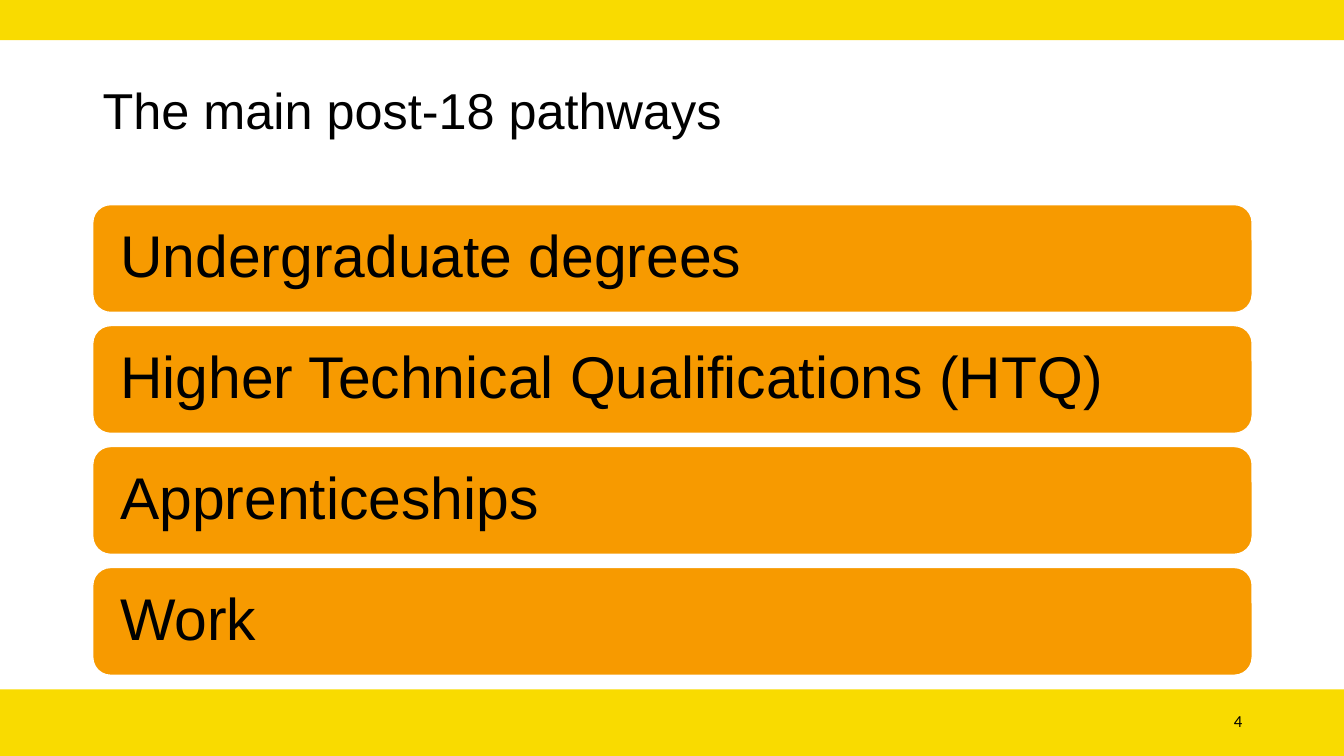
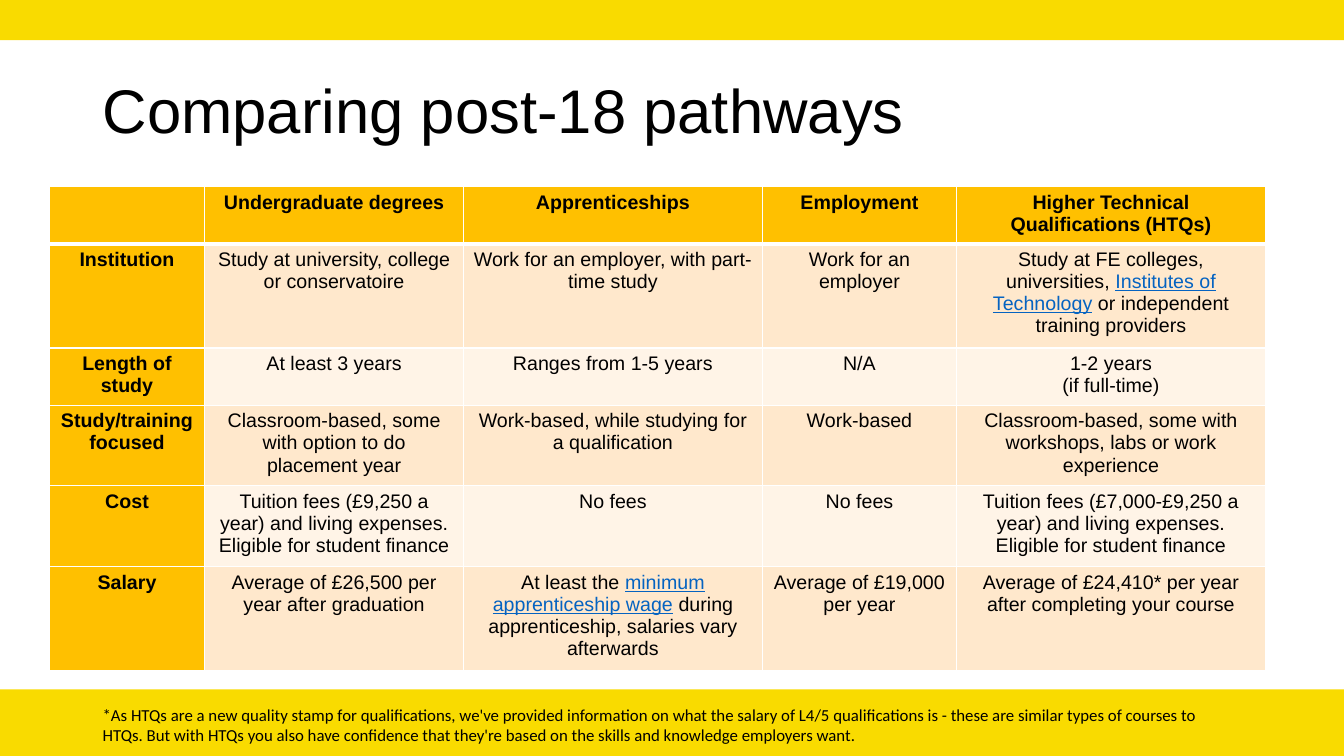
from lxml import etree
from pptx import Presentation
from pptx.dml.color import RGBColor
from pptx.enum import shapes, text as t
from pptx.oxml import ns
from pptx.util import Inches, Pt

BLACK = RGBColor(0x00, 0x00, 0x00)
WHITE = RGBColor(0xFF, 0xFF, 0xFF)
YELLOW = RGBColor(0xF9, 0xDB, 0x00)
ORANGE = RGBColor(0xF7, 0x9A, 0x00)
AMBER = RGBColor(0xFF, 0xC0, 0x00)
PEACH = RGBColor(0xFF, 0xE8, 0xCC)
CREAM = RGBColor(0xFF, 0xF4, 0xE7)
LINK_BLUE = RGBColor(0x05, 0x63, 0xC1)

SLIDE_WIDTH, SLIDE_HEIGHT = 13.33, 7.5
MARGIN = 0.92
LINK_MARK = "|"

PATHWAYS = [
    "Undergraduate degrees",
    "Higher Technical Qualifications (HTQ)",
    "Apprenticeships",
    "Work",
]

# Text between two link marks is shown as a link
COMPARISON = [
    ["", "Undergraduate degrees", "Apprenticeships", "Employment",
     "Higher Technical Qualifications (HTQs)"],
    ["Institution", "Study at university, college or conservatoire",
     "Work for an employer, with part-time study", "Work for an employer",
     "Study at FE colleges, universities, |Institutes of Technology| "
     "or independent training providers"],
    ["Length of study", "At least 3 years", "Ranges from 1-5 years", "N/A",
     "1-2 years\n(if full-time)"],
    ["Study/training focused",
     "Classroom-based, some with option to do placement year",
     "Work-based, while studying for a qualification", "Work-based",
     "Classroom-based, some with workshops, labs or work experience"],
    ["Cost",
     "Tuition fees (£9,250 a year) and living expenses. "
     "Eligible for student finance",
     "No fees", "No fees",
     "Tuition fees (£7,000-£9,250 a year) and living expenses. "
     "Eligible for student finance"],
    ["Salary", "Average of £26,500 per year after graduation",
     "At least the |minimum apprenticeship wage| during apprenticeship, "
     "salaries vary afterwards",
     "Average of £19,000 per year",
     "Average of £24,410* per year after completing your course"],
]
COLUMN_WIDTHS = [1.54, 2.57, 2.96, 1.93, 3.06]
ROW_HEIGHTS = [0.55, 0.97, 0.55, 0.77, 0.76, 0.97]

SALARY_NOTE = (
    "*As HTQs are a new quality stamp for qualifications, we've provided "
    "information on what the salary of L4/5 qualifications is - these are "
    "similar types of courses to HTQs. But with HTQs you also have confidence "
    "that they're based on the skills and knowledge employers want."
)


def write_text(frame, content, size=14, font="Arial", bold=False,
               align=t.PP_ALIGN.LEFT, spacing=None):
    """Fill a text frame: one paragraph a line, links between link marks."""
    frame.word_wrap = True
    for number, line in enumerate(content.split("\n")):
        paragraph = frame.add_paragraph() if number else frame.paragraphs[0]
        paragraph.alignment = align
        if spacing:
            paragraph.line_spacing = spacing
        for position, part in enumerate(line.split(LINK_MARK)):
            is_link = position % 2 == 1
            run = paragraph.add_run()
            run.text = part
            run.font.name = font
            run.font.size = Pt(size)
            run.font.bold = bold
            run.font.underline = is_link
            run.font.color.rgb = LINK_BLUE if is_link else BLACK


def add_text(slide, left, top, width, height, content,
             anchor=t.MSO_ANCHOR.TOP, **text_format):
    box = slide.shapes.add_textbox(
        Inches(left), Inches(top), Inches(width), Inches(height))
    box.text_frame.vertical_anchor = anchor
    write_text(box.text_frame, content, **text_format)


def add_block(slide, kind, left, top, width, height, fill):
    block = slide.shapes.add_shape(
        kind, Inches(left), Inches(top), Inches(width), Inches(height))
    block.shadow.inherit = False
    block.fill.solid()
    block.fill.fore_color.rgb = fill
    block.line.fill.background()
    return block


def add_base_slide(deck, title, title_size):
    """Blank slide with the shared yellow bands and title."""
    slide = deck.slides.add_slide(deck.slide_layouts[6])
    for top, height in ((0, 0.4), (6.84, SLIDE_HEIGHT - 6.84)):
        add_block(slide, shapes.MSO_SHAPE.RECTANGLE,
                  0, top, SLIDE_WIDTH, height, YELLOW)
    add_text(slide, MARGIN, 0.4, 10.04, 1.45, title, size=title_size,
             anchor=t.MSO_ANCHOR.MIDDLE, spacing=0.9)
    return slide


def add_pathway_bar(slide, top, label):
    bar = add_block(slide, shapes.MSO_SHAPE.ROUNDED_RECTANGLE,
                    MARGIN, top, 11.5, 1.07, ORANGE)
    bar.line.color.rgb = WHITE
    bar.line.width = Pt(1)
    frame = bar.text_frame
    frame.vertical_anchor = t.MSO_ANCHOR.MIDDLE
    frame.margin_left = frame.margin_right = Inches(0.22)
    write_text(frame, label, size=42, spacing=0.9)


def set_borders(cell, top=1, bottom=1):
    """Draw white cell borders; they must precede the fill in the XML."""
    properties = cell._tc.get_or_add_tcPr()
    for side, points in (("L", 1), ("R", 1), ("T", top), ("B", bottom)):
        border = etree.SubElement(
            properties, ns.qn("a:ln" + side), w=str(Pt(points)))
        fill = etree.SubElement(border, ns.qn("a:solidFill"))
        etree.SubElement(fill, ns.qn("a:srgbClr"), val=str(WHITE))


def add_comparison_table(slide, left, top):
    table = slide.shapes.add_table(
        len(ROW_HEIGHTS), len(COLUMN_WIDTHS), Inches(left), Inches(top),
        Inches(sum(COLUMN_WIDTHS)), Inches(sum(ROW_HEIGHTS))).table
    for column, width in zip(table.columns, COLUMN_WIDTHS):
        column.width = Inches(width)
    for row, height in zip(table.rows, ROW_HEIGHTS):
        row.height = Inches(height)

    for r, entries in enumerate(COMPARISON):
        for c, entry in enumerate(entries):
            cell = table.cell(r, c)
            is_heading = r == 0 or c == 0
            set_borders(cell, top=3 if r == 1 else 1, bottom=3 if r == 0 else 1)
            cell.fill.solid()
            band = PEACH if r % 2 else CREAM
            cell.fill.fore_color.rgb = AMBER if is_heading else band
            if entry:
                write_text(cell.text_frame, entry, bold=is_heading,
                           align=t.PP_ALIGN.CENTER)


def build_pathways_slide(deck):
    slide = add_base_slide(deck, "The main post-18 pathways", 36)
    for number, pathway in enumerate(PATHWAYS):
        add_pathway_bar(slide, 2.03 + 1.2 * number, pathway)
    # Page number
    add_text(slide, 9.42, 6.95, 3, 0.4, "4", size=12, font="Calibri",
             anchor=t.MSO_ANCHOR.MIDDLE, align=t.PP_ALIGN.RIGHT)


def build_comparison_slide(deck):
    slide = add_base_slide(deck, "Comparing post-18 pathways", 44)
    add_comparison_table(slide, 0.49, 1.85)
    # Footnote in the bottom band
    add_text(slide, MARGIN, 6.94, 11.34, 0.5, SALARY_NOTE,
             size=12, font="Calibri")


def main():
    deck = Presentation()
    deck.slide_width = Inches(SLIDE_WIDTH)
    deck.slide_height = Inches(SLIDE_HEIGHT)
    build_pathways_slide(deck)
    build_comparison_slide(deck)
    deck.save("out.pptx")


if __name__ == "__main__":
    main()
